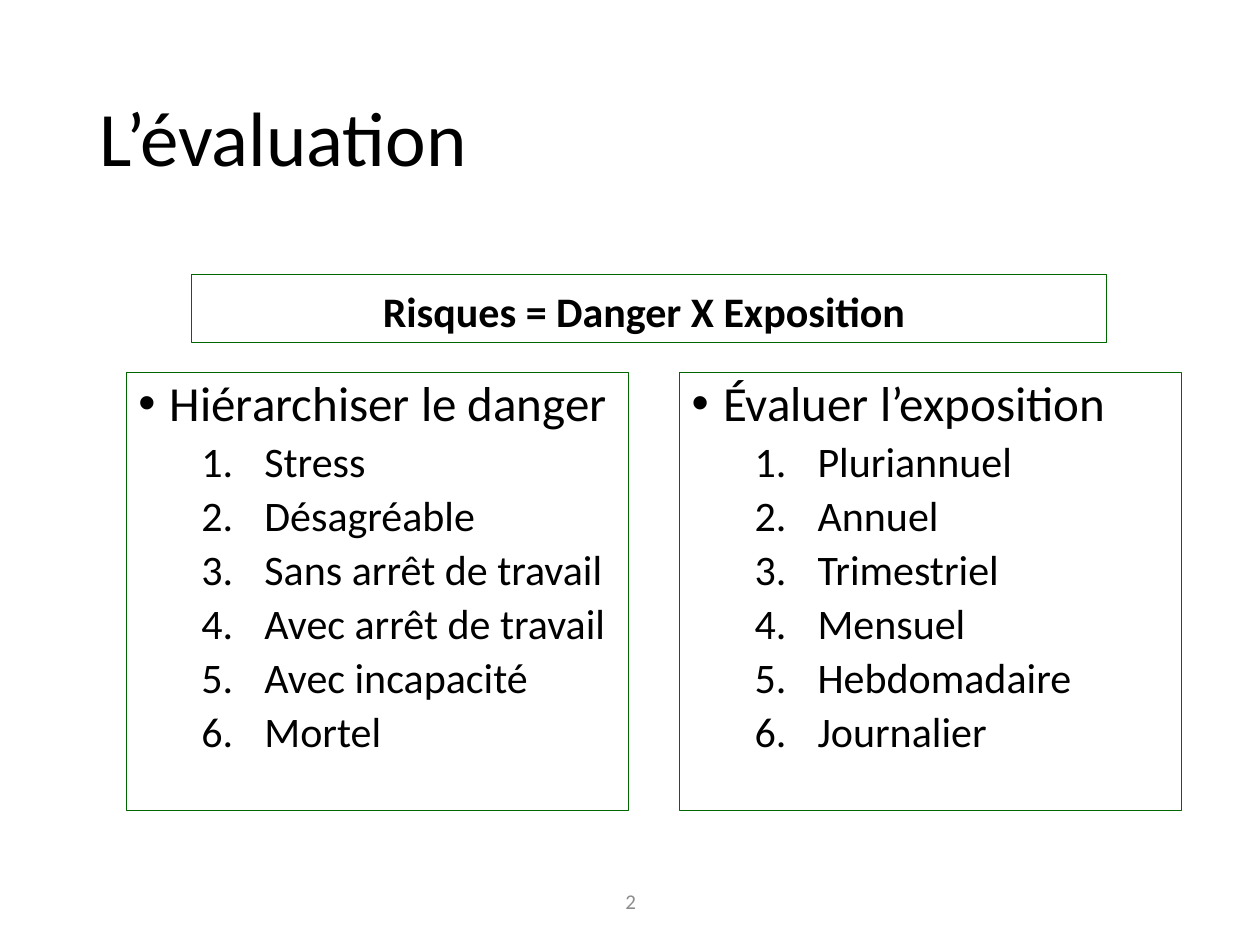
from dataclasses import dataclass

from lxml import etree
from pptx import Presentation
from pptx import util as u
from pptx.dml.color import RGBColor
from pptx.enum import shapes, text
from pptx.oxml.ns import qn

FONT = "Calibri"
BLACK, GREEN, GREY = "000000", "006600", "8C8C8C"
PANEL_TOP, PANEL_WIDTH, PANEL_HEIGHT = 2.96, 3.99, 3.47


@dataclass
class Panel:
    left: float
    heading: str
    levels: list[str]


PANELS = [
    Panel(1, "Hiérarchiser le danger",
          ["Stress", "Désagréable", "Sans arrêt de travail",
           "Avec arrêt de travail", "Avec incapacité", "Mortel"]),
    Panel(5.39, "Évaluer l’exposition",
          ["Pluriannuel", "Annuel", "Trimestriel",
           "Mensuel", "Hebdomadaire", "Journalier"]),
]


def rgb(color: str) -> RGBColor:
    return RGBColor.from_string(color)


def write(paragraph, content: str, *, size: float, color: str = BLACK,
          bold: bool = False, align=text.PP_ALIGN.LEFT,
          line_spacing: float = 0.9, before: float = 0) -> None:
    """Fill a paragraph with one formatted run."""
    paragraph.alignment = align
    paragraph.line_spacing = line_spacing
    paragraph.space_before = u.Pt(before)
    run = paragraph.add_run()
    run.text = content
    font = run.font
    font.name, font.size, font.bold = FONT, u.Pt(size), bold
    font.color.rgb = rgb(color)


def add_bullet(paragraph, margin: float, hanging: float, tag: str, **attributes: str) -> None:
    """Give a paragraph a hanging indent and a bullet or number."""
    properties = paragraph._p.get_or_add_pPr()
    properties.set("marL", str(u.Inches(margin)))
    properties.set("indent", str(-u.Inches(hanging)))
    font = etree.SubElement(properties, qn("a:buFont"))
    font.set("typeface", "Arial" if tag == "a:buChar" else "+mj-lt")
    bullet = etree.SubElement(properties, qn(tag))
    for name, value in attributes.items():
        bullet.set(name, value)


def add_frame(slide, left: float, top: float, width: float, height: float, anchor):
    """Draw a green outlined rectangle and return its text frame."""
    shape = slide.shapes.add_shape(
        shapes.MSO_SHAPE.RECTANGLE,
        u.Inches(left), u.Inches(top), u.Inches(width), u.Inches(height))
    shape.shadow.inherit = False
    shape.fill.background()
    shape.line.color.rgb = rgb(GREEN)
    shape.line.width = u.Pt(0.5)
    frame = shape.text_frame
    frame.word_wrap = True
    frame.vertical_anchor = anchor
    return frame


def add_panel(slide, panel: Panel) -> None:
    frame = add_frame(slide, panel.left, PANEL_TOP, PANEL_WIDTH, PANEL_HEIGHT,
                      text.MSO_ANCHOR.TOP)
    heading = frame.paragraphs[0]
    write(heading, panel.heading, size=28, before=10)
    add_bullet(heading, 0.25, 0.25, "a:buChar", char="•")
    for level in panel.levels:
        paragraph = frame.add_paragraph()
        paragraph.level = 1
        write(paragraph, level, size=24, before=5)
        add_bullet(paragraph, 1, 0.5, "a:buAutoNum", type="arabicPeriod")


def main() -> None:
    presentation = Presentation()
    presentation.slide_width, presentation.slide_height = u.Inches(10), u.Inches(7.5)
    slide = presentation.slides.add_slide(presentation.slide_layouts[5])

    # Title
    title = slide.shapes.title
    title.left, title.top = u.Inches(0.69), u.Inches(0.4)
    title.width, title.height = u.Inches(8.62), u.Inches(1.45)
    title.text_frame.vertical_anchor = text.MSO_ANCHOR.MIDDLE
    write(title.text_frame.paragraphs[0], "L’évaluation", size=44)

    # Formula and the two scales
    formula = add_frame(slide, 1.52, 2.18, 7.26, 0.54, text.MSO_ANCHOR.BOTTOM)
    write(formula.paragraphs[0], "Risques = Danger X Exposition ", size=24,
          bold=True, align=text.PP_ALIGN.CENTER, before=10)
    for panel in PANELS:
        add_panel(slide, panel)

    # Page number
    number = slide.shapes.add_textbox(
        u.Inches(3.42), u.Inches(6.95), u.Inches(3.17), u.Inches(0.4)).text_frame
    number.word_wrap = True
    number.vertical_anchor = text.MSO_ANCHOR.MIDDLE
    write(number.paragraphs[0], "2", size=12, color=GREY,
          align=text.PP_ALIGN.CENTER, line_spacing=1.0)

    presentation.save("out.pptx")


if __name__ == "__main__":
    main()
